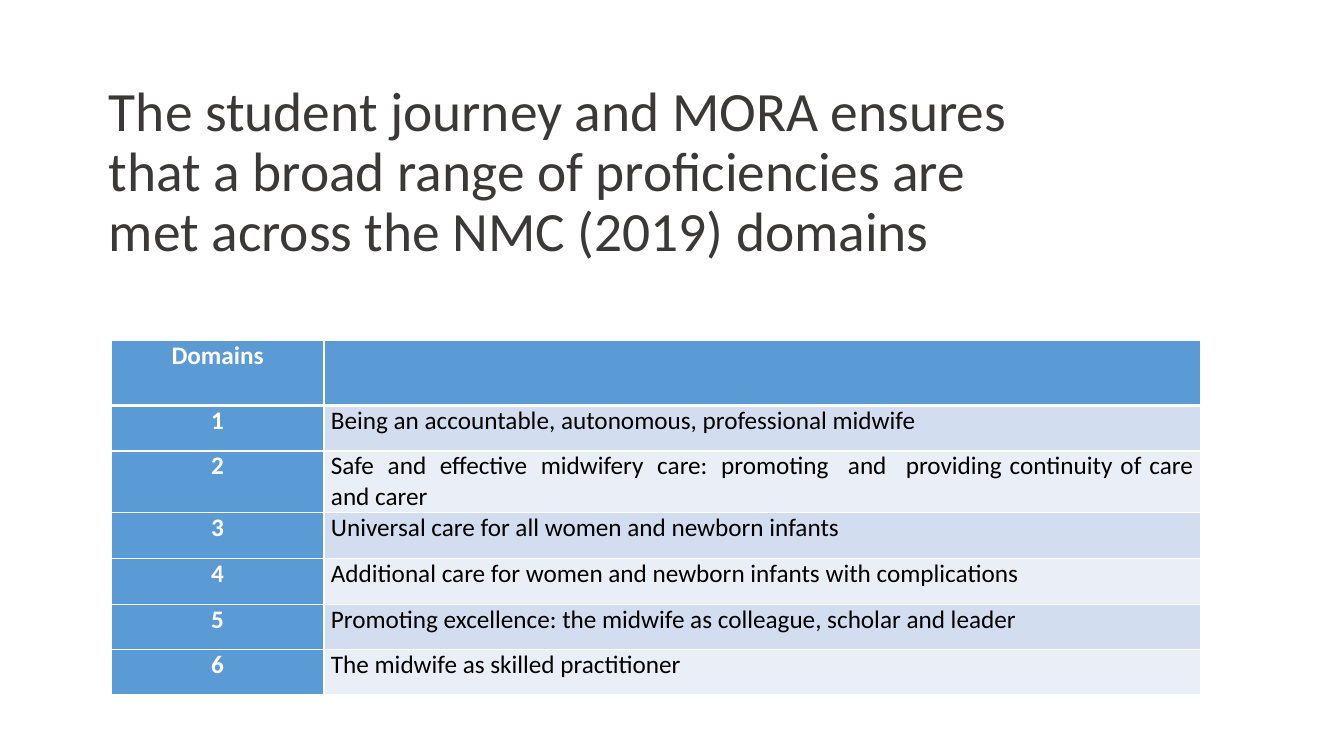
from lxml import etree
from pptx import Presentation
from pptx.dml.color import RGBColor
from pptx.enum.text import MSO_ANCHOR, PP_ALIGN
from pptx.oxml.ns import qn
from pptx.util import Pt

CENTER, JUSTIFY, LEFT = PP_ALIGN.CENTER, PP_ALIGN.JUSTIFY, PP_ALIGN.LEFT
MIDDLE = MSO_ANCHOR.MIDDLE
TITLE_ONLY = 5

WHITE = RGBColor(0xFF, 0xFF, 0xFF)
BLACK = RGBColor(0, 0, 0)
CHARCOAL = RGBColor(0x3B, 0x38, 0x38)
BLUE = RGBColor(0x5B, 0x9B, 0xD5)
BANDS = (RGBColor(0xD2, 0xDE, 0xEF), RGBColor(0xEA, 0xEF, 0xF7))

# A tilde stands for a no-break space.
TITLE = ("The student journey and MORA ensures that~a~broad range of~proficiencies "
         "are met~across the NMC (2019) domains")
DOMAINS = (
    "Being an accountable, autonomous, professional midwife",
    "Safe~ and~ effective~ midwifery~ care:~ promoting~~ and~~ providing "
    "continuity of care and carer",
    "Universal care for all women and newborn infants",
    "Additional care for women and newborn infants with complications",
    "Promoting excellence: the midwife as colleague, scholar and leader",
    "The midwife as skilled practitioner",
)
COLUMN_WIDTHS = (151.9, 626.4)
ROW_HEIGHTS = (46.8, 32.4, 33.1, 33.1, 32.4, 32.4, 32.4)


def write_text(frame, text, size=18, color=BLACK, bold=False, align=LEFT,
               font="Calibri", line_spacing=1.0):
    paragraph = frame.paragraphs[0]
    paragraph.alignment = align
    paragraph.line_spacing = line_spacing
    paragraph.font.size = Pt(size)
    if text:
        run = paragraph.add_run()
        run.text = text.replace("~", chr(160))
        run.font.name = font
        run.font.size = Pt(size)
        run.font.bold = bold
        run.font.color.rgb = color


def set_borders(cell, bottom_width):
    """Draw white cell borders; they must precede the fill in the XML."""
    properties = cell._tc.get_or_add_tcPr()
    widths = {"a:lnL": 1, "a:lnR": 1, "a:lnT": 1, "a:lnB": bottom_width}
    for tag, width in widths.items():
        line = etree.SubElement(properties, qn(tag), w=str(Pt(width)))
        fill = etree.SubElement(line, qn("a:solidFill"))
        etree.SubElement(fill, qn("a:srgbClr"), val=str(WHITE))


class SlideBuilder:
    def __init__(self, presentation):
        layout = presentation.slide_layouts[TITLE_ONLY]
        self.slide = presentation.slides.add_slide(layout)

    def add_title(self, text, left, top, width, height):
        title = self.slide.shapes.title
        title.left, title.top = Pt(left), Pt(top)
        title.width, title.height = Pt(width), Pt(height)
        frame = title.text_frame
        frame.word_wrap = True
        frame.vertical_anchor = MIDDLE
        frame.margin_left = frame.margin_right = Pt(7.2)
        frame.margin_top, frame.margin_bottom = Pt(3.6), Pt(46.8)
        write_text(frame, text, size=39.6, color=CHARCOAL, line_spacing=0.9)

    def add_domain_table(self, domains, left, top):
        table = self.slide.shapes.add_table(
            len(ROW_HEIGHTS), len(COLUMN_WIDTHS), Pt(left), Pt(top),
            Pt(sum(COLUMN_WIDTHS)), Pt(sum(ROW_HEIGHTS))).table
        for column, width in zip(table.columns, COLUMN_WIDTHS):
            column.width = Pt(width)
        for row, height in zip(table.rows, ROW_HEIGHTS):
            row.height = Pt(height)
        self.fill_row(table, 0, "Domains", "", BLUE, bottom_width=3)
        for number, domain in enumerate(domains, start=1):
            band = BANDS[(number - 1) % 2]
            self.fill_row(table, number, str(number), domain, band)

    def fill_row(self, table, row, label, description, fill, bottom_width=1):
        label_cell, description_cell = table.cell(row, 0), table.cell(row, 1)
        for cell, color in ((label_cell, BLUE), (description_cell, fill)):
            set_borders(cell, bottom_width)
            cell.fill.solid()
            cell.fill.fore_color.rgb = color
            cell.margin_left = cell.margin_right = Pt(5)
            cell.margin_top = cell.margin_bottom = Pt(0)
        write_text(label_cell.text_frame, label, color=WHITE, bold=True, align=CENTER)
        write_text(description_cell.text_frame, description, align=JUSTIFY)


def main():
    presentation = Presentation()
    presentation.slide_width, presentation.slide_height = Pt(960), Pt(540)
    builder = SlideBuilder(presentation)
    builder.add_title(TITLE, 70.6, 93.6, 800.6, 104.4)
    builder.add_domain_table(DOMAINS, 79.5, 242.9)
    presentation.save("out.pptx")


if __name__ == "__main__":
    main()
